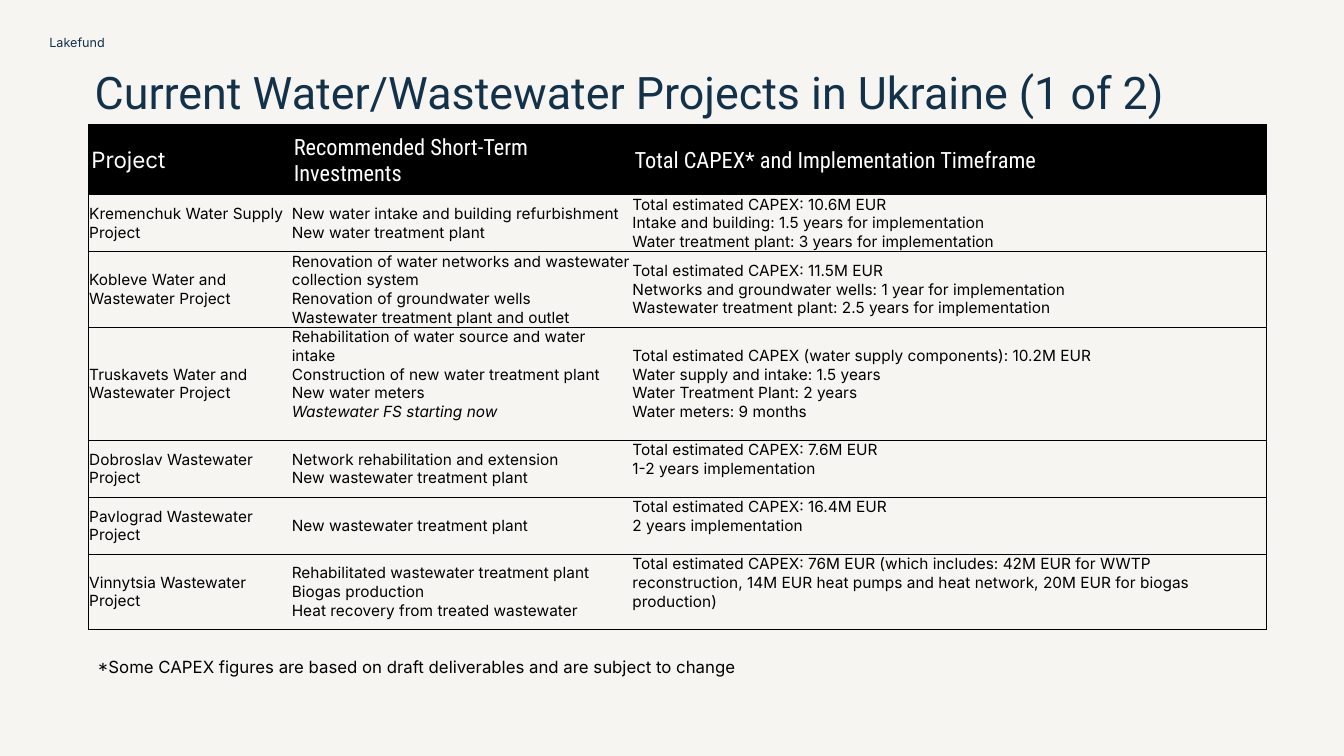
from lxml.etree import SubElement
from pptx import Presentation
from pptx.dml.color import RGBColor
from pptx.enum.text import MSO_ANCHOR as Anchor
from pptx.oxml.ns import qn
from pptx.util import Pt

NAVY, BLACK, WHITE, PAPER = "13324A", "000000", "FFFFFF", "F6F5F2"
COLUMN_WIDTHS = [144.7, 243.4, 453.6]
ROW_HEIGHTS = [50, 40.6, 54.2, 80.7, 40.7, 40.7, 53.7]
HEADER_INSETS = (2.2, 5.8, 1.4, 3.6)
BODY_INSETS = (0.72, 0.72, 0.72, 0)
HEADINGS = [
    ("Project", "Inter"),
    ("Recommended Short-Term Investments", "Roboto Condensed"),
    ("Total CAPEX* and Implementation Timeframe", "Roboto Condensed"),
]
PROJECTS = [
    (["Kremenchuk Water Supply Project"],
     ["New water intake and building refurbishment", "New water treatment plant"],
     ["Total estimated CAPEX: 10.6M EUR",
      "Intake and building: 1.5 years for implementation",
      "Water treatment plant: 3 years for implementation"]),
    (["Kobleve Water and Wastewater Project"],
     ["Renovation of water networks and wastewater collection system",
      "Renovation of groundwater wells",
      "Wastewater treatment plant and outlet"],
     ["Total estimated CAPEX: 11.5M EUR",
      "Networks and groundwater wells: 1 year for implementation",
      "Wastewater treatment plant: 2.5 years for implementation"]),
    (["Truskavets Water and Wastewater Project"],
     ["Rehabilitation of water source and water intake",
      "Construction of new water treatment plant",
      "New water meters",
      "Wastewater FS starting now"],
     ["Total estimated CAPEX (water supply components): 10.2M EUR",
      "Water supply and intake: 1.5 years",
      "Water Treatment Plant: 2 years",
      "Water meters: 9 months"]),
    (["Dobroslav Wastewater Project"],
     ["Network rehabilitation and extension", "New wastewater treatment plant"],
     ["Total estimated CAPEX: 7.6M EUR", "1-2 years implementation"]),
    (["Pavlograd Wastewater Project"],
     ["New wastewater treatment plant"],
     ["Total estimated CAPEX: 16.4M EUR", "2 years implementation"]),
    (["Vinnytsia Wastewater Project"],
     ["Rehabilitated wastewater treatment plant",
      "Biogas production",
      "Heat recovery from treated wastewater"],
     ["Total estimated CAPEX: 76M EUR (which includes: 42M EUR for WWTP "
      "reconstruction, 14M EUR heat pumps and heat network, 20M EUR for biogas "
      "production)"]),
]
TOP_CELLS = {(3, 1), (4, 2), (5, 2), (6, 2)}
ITALIC_LINES = {"Wastewater FS starting now"}


def color(value):
    """Turn a hex string into a colour."""
    return RGBColor.from_string(value)


def set_insets(target, insets):
    """Set left, top, right and bottom margins in points."""
    sides = ("left", "top", "right", "bottom")
    for side, inset in zip(sides, insets):
        setattr(target, f"margin_{side}", Pt(inset))


def write_lines(frame, lines, font, size, ink):
    """Write one paragraph per line."""
    for index, line in enumerate(lines):
        para = frame.paragraphs[0] if index == 0 else frame.add_paragraph()
        span = para.add_run()
        span.text = line
        span.font.name = font
        span.font.size = Pt(size)
        span.font.bold = False
        span.font.italic = line in ITALIC_LINES
        span.font.color.rgb = color(ink)


def add_label(page, place, text, font, size, ink, insets, anchor):
    """Add a wrapped text box and return its frame."""
    box = page.shapes.add_textbox(*map(Pt, place))
    frame = box.text_frame
    frame.word_wrap = True
    frame.vertical_anchor = anchor
    set_insets(frame, insets)
    write_lines(frame, [text], font, size, ink)
    return frame


def set_borders(cell, visible):
    """Draw thin black lines on the visible sides and none on the others."""
    properties = cell._tc.get_or_add_tcPr()
    for side in "LRTB":
        line = SubElement(properties, qn(f"a:ln{side}"), w=str(Pt(0.5)))
        if side in visible:
            fill = SubElement(line, qn("a:solidFill"))
            SubElement(fill, qn("a:srgbClr"), val=BLACK)
        else:
            SubElement(line, qn("a:noFill"))


def format_cell(cell, row, column):
    """Set borders, fill, margins and anchor by position in the table."""
    outer = {0: "L", len(COLUMN_WIDTHS) - 1: "R"}
    set_borders(cell, "TB" + outer.get(column, ""))
    if row == 0:
        cell.fill.solid()
        cell.fill.fore_color.rgb = color(BLACK)
    else:
        cell.fill.background()
    set_insets(cell, BODY_INSETS if row else HEADER_INSETS)
    cell.vertical_anchor = Anchor.TOP if (row, column) in TOP_CELLS else Anchor.MIDDLE


def add_project_table(page):
    """Add the table of projects, investments and costs."""
    frame = page.shapes.add_table(
        len(ROW_HEIGHTS), len(COLUMN_WIDTHS), Pt(63), Pt(88.8),
        Pt(sum(COLUMN_WIDTHS)), Pt(sum(ROW_HEIGHTS)))
    table = frame.table
    table.horz_banding = False
    for column, width in zip(table.columns, COLUMN_WIDTHS):
        column.width = Pt(width)
    for row, height in zip(table.rows, ROW_HEIGHTS):
        row.height = Pt(height)
    for column, (heading, font) in enumerate(HEADINGS):
        cell = table.cell(0, column)
        format_cell(cell, 0, column)
        write_lines(cell.text_frame, [heading], font, 16, WHITE)
    for row, project in enumerate(PROJECTS, start=1):
        for column, lines in enumerate(project):
            cell = table.cell(row, column)
            format_cell(cell, row, column)
            write_lines(cell.text_frame, lines, "Inter", 11, BLACK)


def main():
    """Build and save the slide."""
    deck = Presentation()
    deck.slide_width, deck.slide_height = Pt(960), Pt(540)
    page = deck.slides.add_slide(deck.slide_layouts[6])
    page.background.fill.solid()
    page.background.fill.fore_color.rgb = color(PAPER)

    add_label(page, (35.3, 18.7, 64, 17.3), "Lakefund",
              "Inter", 9, NAVY, (0, 0, 0, 0), Anchor.BOTTOM)
    title = add_label(page, (67.7, 25.2, 823.7, 63.4),
                      "Current Water/Wastewater Projects in Ukraine (1 of 2)",
                      "Roboto", 32, NAVY, (0, 3.6, 7.2, 3.6), Anchor.BOTTOM)
    title.paragraphs[0].line_spacing = 0.9
    add_project_table(page)
    add_label(page, (62.7, 465.8, 664.6, 21.8),
              "*Some CAPEX figures are based on draft deliverables and are subject to change",
              "Inter", 12, BLACK, (7.2, 3.6, 7.2, 3.6), Anchor.TOP)
    deck.save("out.pptx")


if __name__ == "__main__":
    main()
